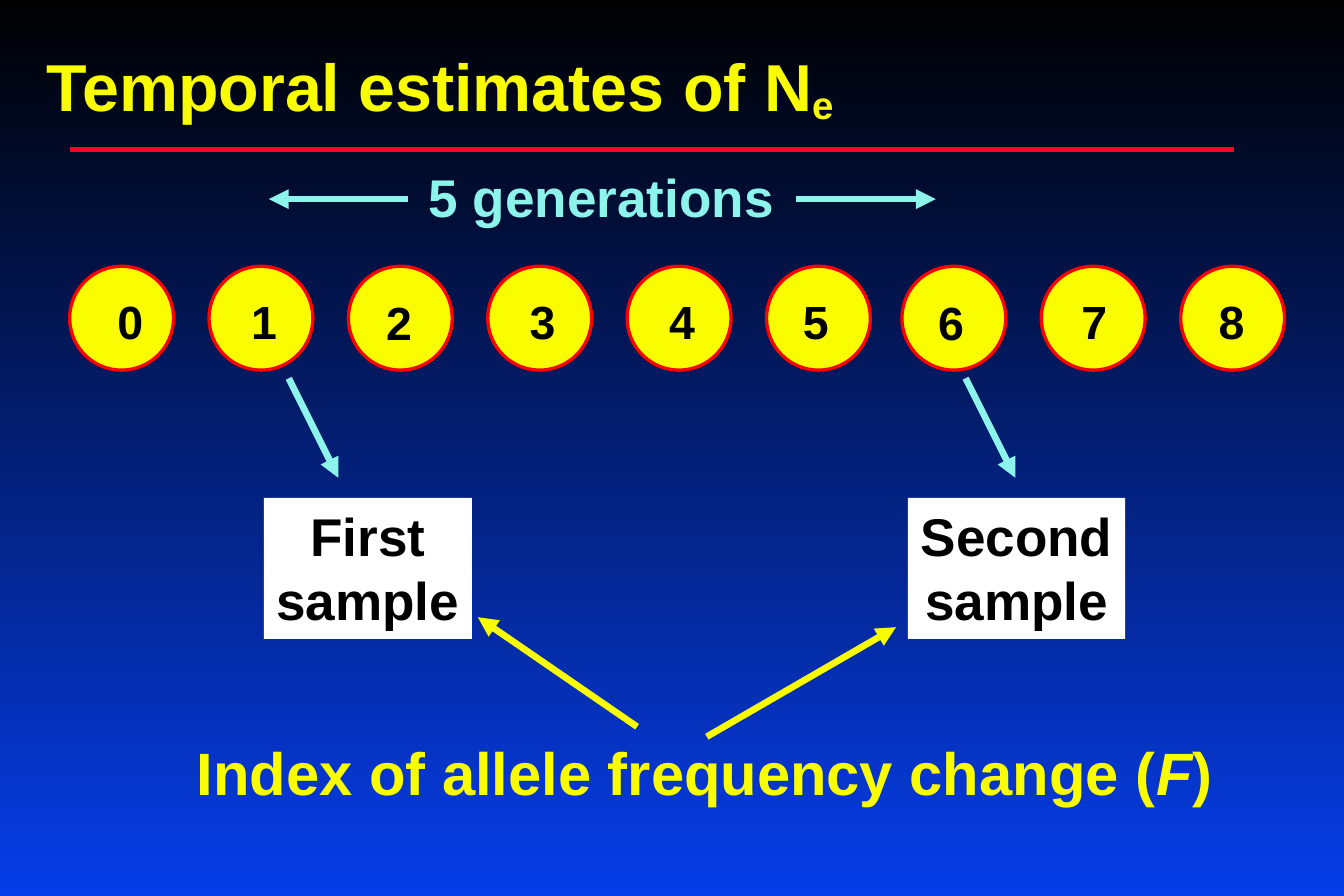
from lxml.etree import SubElement
from pptx import Presentation
from pptx.dml.color import RGBColor
from pptx.enum.shapes import MSO_CONNECTOR as Link, MSO_SHAPE as Kind
from pptx.enum.text import MSO_ANCHOR as Anchor, MSO_AUTO_SIZE as Fit, PP_ALIGN as Align
from pptx.oxml.ns import qn
from pptx.util import Pt

BLACK = RGBColor(0x00, 0x00, 0x00)
WHITE = RGBColor(0xFF, 0xFF, 0xFF)
BLUE = RGBColor(0x06, 0x3D, 0xE8)
YELLOW = RGBColor(0xFA, 0xFD, 0x00)
AQUA = RGBColor(0x8C, 0xF4, 0xEA)
RED = RGBColor(0xFF, 0x00, 0x00)
RULE = RGBColor(0xFC, 0x01, 0x28)


class Board:
    font = {"name": "Arial", "bold": True}
    frame = {"word_wrap": False, "auto_size": Fit.NONE, "vertical_anchor": Anchor.TOP}

    def __init__(self, deck):
        self.slide = deck.slides.add_slide(deck.slide_layouts[5])
        self.shapes = self.slide.shapes

    def back(self, top, base):
        fill = self.slide.background.fill
        fill.gradient()
        fill.gradient_angle = 270
        for stop, color, place in zip(fill.gradient_stops, (top, base), (0, 1)):
            stop.color.rgb = color
            stop.position = place

    def label(self, shape, lines, size, color):
        frame = shape.text_frame
        for key, value in self.frame.items():
            setattr(frame, key, value)
        for i, line in enumerate(lines):
            para = frame.add_paragraph() if i else frame.paragraphs[0]
            para.alignment = Align.CENTER
            for words, extra in line:
                run = para.add_run()
                run.text = words
                for key, value in {**self.font, "size": Pt(size), **extra}.items():
                    setattr(run.font, key, value)
                run.font.color.rgb = color

    def title(self, spot, words, sub, size, color):
        shape = self.shapes.title
        for key, value in zip(("left", "top", "width", "height"), spot):
            setattr(shape, key, Pt(value))
        self.label(shape, [[(words, {}), (sub, {})]], size, color)
        run = shape.text_frame.paragraphs[0].runs[-1]
        run.font._element.set("baseline", "-12000")

    def text(self, spot, line, size, color):
        shape = self.shapes.add_textbox(*map(Pt, spot))
        self.label(shape, [line], size, color)

    def shape(self, kind, spot, fill, edge=None):
        shape = self.shapes.add_shape(kind, *map(Pt, spot))
        shape.shadow.inherit = False
        shape.fill.solid()
        shape.fill.fore_color.rgb = fill
        if edge:
            shape.line.color.rgb = edge
            shape.line.width = Pt(2)
        else:
            shape.line.fill.background()
        return shape

    def panel(self, spot, words):
        shape = self.shape(Kind.RECTANGLE, spot, WHITE)
        self.label(shape, [[(word, {})] for word in words], 32, BLACK)

    def line(self, ends, color, width=4, tip=True):
        link = self.shapes.add_connector(Link.STRAIGHT, *map(Pt, ends))
        link.line.color.rgb = color
        link.line.width = Pt(width)
        props = link._element.spPr
        if tip:
            SubElement(props.find(qn("a:ln")), qn("a:tailEnd"), type="triangle")
        SubElement(props, qn("a:effectLst"))


def main():
    deck = Presentation()
    deck.slide_width, deck.slide_height = Pt(810), Pt(540)
    board = Board(deck)
    board.back(BLACK, BLUE)
    board.title((17.3, 23.8, 496, 55.4), "Temporal estimates of N", "e", 40, YELLOW)

    digits = (63.4, 144, 225.4, 311.8, 396, 476.6, 558, 644.4, 727.2)
    for i, left in enumerate(digits):
        shift = 2.4 if i > 5 else 0
        board.shape(Kind.OVAL, (42 + 84 * i - shift, 160.5, 62.6, 62.6), YELLOW, RED)
        top = 173.7 if i in (2, 6) else 172.8
        board.text((left, top, 30.2, 41), [(str(i), {})], 28, BLACK)

    board.panel((159.1, 300, 125.3, 85), ("First", "sample"))
    board.panel((547.2, 300, 131, 85), ("Second", "sample"))
    board.text((250.5, 95.8, 224, 46), [("5 generations", {})], 32, AQUA)
    index = [("Index of allele frequency change (", {}), ("F", {"italic": True}), (")", {})]
    board.text((108.7, 440, 632, 51), index, 36, YELLOW)

    for ends, color in (
        ((480, 120, 564, 120), AQUA),
        ((246, 120, 162, 120), AQUA),
        ((174, 228, 204, 288), AQUA),
        ((582, 228, 612, 288), AQUA),
        ((384, 438, 288, 372), YELLOW),
        ((426, 444, 540, 378), YELLOW),
    ):
        board.line(ends, color)
    board.line((42, 90, 744, 90), RULE, 3, False)
    deck.save("out.pptx")


if __name__ == "__main__":
    main()
